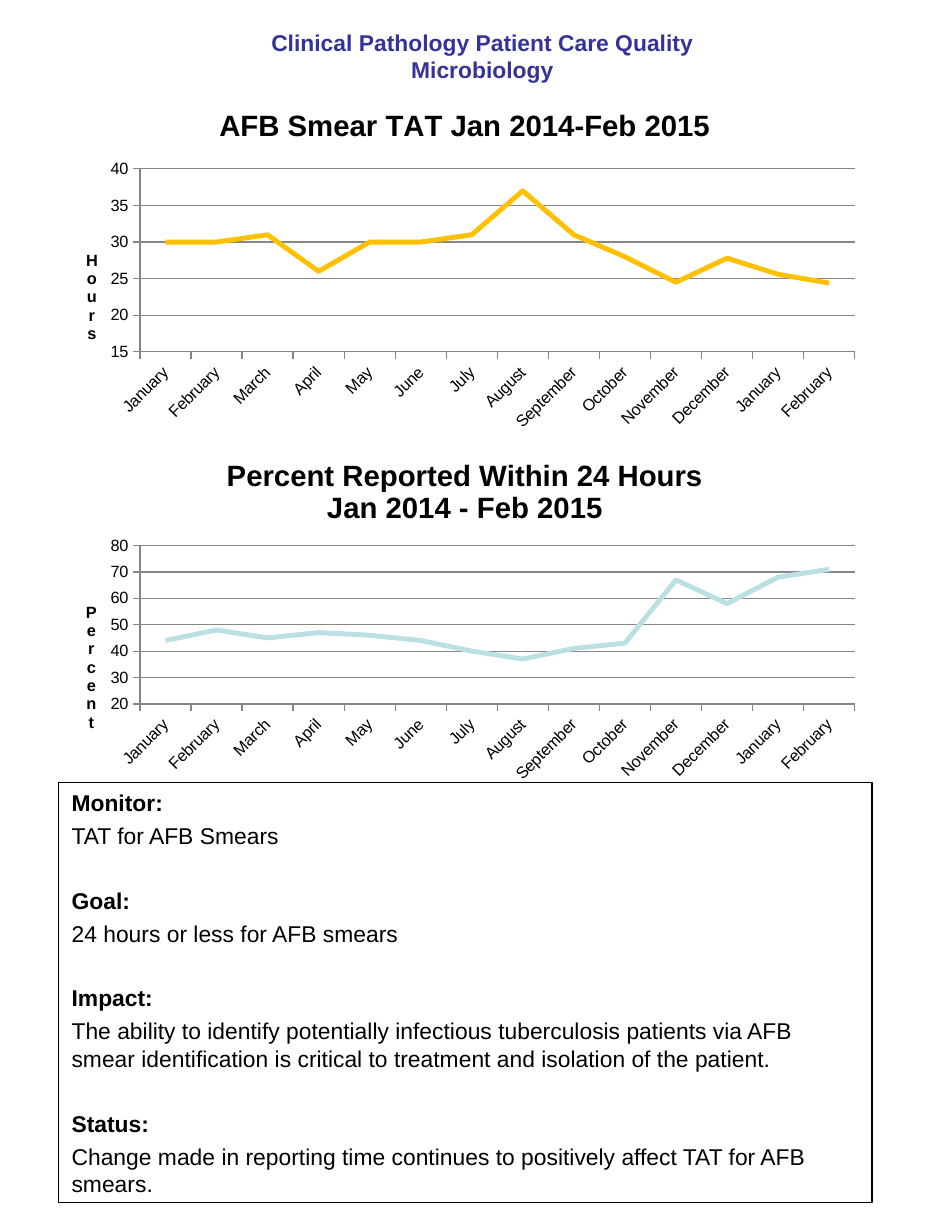
from dataclasses import dataclass

from lxml import etree
from pptx import Presentation
from pptx.chart.data import CategoryChartData
from pptx.dml.color import RGBColor as Color
from pptx.enum.chart import XL_CHART_TYPE as ChartType, XL_TICK_MARK as TickMark
from pptx.enum.text import MSO_ANCHOR as Anchor, MSO_AUTO_SIZE as AutoSize, PP_ALIGN as Align
from pptx.oxml import parse_xml
from pptx.oxml.ns import nsdecls, qn
from pptx.util import Inches, Pt


@dataclass(frozen=True)
class Theme:
    font: str = "Arial"
    heading: Color = Color(0x33, 0x33, 0x99)
    ink: Color = Color(0, 0, 0)
    grid: Color = Color(0x86, 0x86, 0x86)
    hours: Color = Color(0xFF, 0xC0, 0x00)
    percent: Color = Color(0xBB, 0xE0, 0xE3)
    body_size: int = 14
    chart_title_size: int = 18
    label_size: int = 10


THEME = Theme()

MONTHS = ["January", "February", "March", "April", "May", "June", "July", "August",
          "September", "October", "November", "December", "January", "February"]
HOURS = [30, 30, 31, 26, 30, 30, 31, 37, 31, 28, 24.5, 27.8, 25.6, 24.4]
PERCENTS = [44, 48, 45, 47, 46, 44, 40, 37, 41, 43, 67, 58, 68, 71]
SECTIONS = [
    ("Monitor:", "TAT for AFB Smears"),
    ("Goal:", "24 hours or less for AFB smears"),
    ("Impact:", "The ability to identify potentially infectious tuberculosis patients "
                "via AFB smear identification is critical to treatment and isolation "
                "of the patient."),
    ("Status:", "Change made in reporting time continues to positively affect TAT "
                "for AFB smears."),
]


def style_font(font, size, color=THEME.ink, bold=False):
    font.name = THEME.font
    font.size = Pt(size)
    font.bold = bold
    font.color.rgb = color


def place(box, left, top, width, height):
    box.left, box.top = Inches(left), Inches(top)
    box.width, box.height = Inches(width), Inches(height)
    frame = box.text_frame
    frame.auto_size = AutoSize.NONE
    frame.word_wrap = True
    frame.margin_left = frame.margin_right = Inches(0.11)
    frame.margin_top = frame.margin_bottom = Inches(0.05)
    return frame


def fill_title(box, text):
    frame = place(box, 0.51, 0.25, 7.2, 0.45)
    frame.vertical_anchor = Anchor.MIDDLE
    frame.text = text
    for para in frame.paragraphs:
        para.alignment = Align.CENTER
        for span in para.runs:
            style_font(span.font, THEME.body_size, THEME.heading, bold=True)


def add_line(frame, text, bold, gap):
    para = frame.paragraphs[0]
    if para.runs:
        para = frame.add_paragraph()
    para.text = text
    para.space_before = Pt(gap)
    properties = para._p.get_or_add_pPr()
    properties.set("marL", "0")
    properties.set("indent", "0")
    etree.SubElement(properties, qn("a:buNone"))
    style_font(para.runs[0].font, THEME.body_size, bold=bold)


def fill_body(box, sections):
    frame = place(box, 0.5, 6.67, 6.93, 3.58)
    frame.vertical_anchor = Anchor.TOP
    box.line.color.rgb = THEME.ink
    box.line.width = Pt(0.75)
    for index, (label, text) in enumerate(sections):
        add_line(frame, label, True, 23 if index else 3.4)
        add_line(frame, text, False, 3.4)


def set_layout(parent, position, **sizes):
    for old in parent.findall(qn("c:layout")):
        parent.remove(old)
    target = '<c:layoutTarget val="inner"/>' if sizes else ""
    modes = '<c:xMode val="edge"/><c:yMode val="edge"/>'
    values = "".join(f'<c:{name} val="{value}"/>' for name, value in sizes.items())
    x, y = position
    layout = parse_xml(
        f'<c:layout {nsdecls("c")}><c:manualLayout>{target}{modes}'
        f'<c:x val="{x}"/><c:y val="{y}"/>{values}</c:manualLayout></c:layout>')
    text = parent.find(qn("c:tx"))
    parent.insert(0 if text is None else parent.index(text) + 1, layout)


def set_heading(holder, text, size):
    frame = holder.text_frame
    frame.text = text
    for para in frame.paragraphs:
        for span in para.runs:
            style_font(span.font, size, bold=True)
    return frame


def style_axis(axis):
    axis.major_tick_mark = TickMark.OUTSIDE
    axis.minor_tick_mark = TickMark.NONE
    axis.format.line.color.rgb = THEME.grid
    style_font(axis.tick_labels.font, THEME.label_size)


def add_trend(page, top, title, unit, values, color, scale, plot_top, plot_height):
    data = CategoryChartData()
    data.categories = MONTHS
    data.add_series("Series 1", values)
    chart = page.shapes.add_chart(ChartType.LINE, Inches(0.5), Inches(top),
                                  Inches(6.92), Inches(3), data).chart
    chart.has_legend = False
    style_font(chart.font, THEME.label_size)
    chart.has_title = True
    set_heading(chart.chart_title, title, THEME.chart_title_size)
    chart.plots[0].vary_by_categories = False

    series = chart.plots[0].series[0]
    series.smooth = False
    series.format.line.color.rgb = color
    series.format.line.width = Pt(3)

    months, amounts = chart.category_axis, chart.value_axis
    style_axis(months)
    style_axis(amounts)
    months._element.find(qn("c:txPr")).find(qn("a:bodyPr")).set("rot", "-2700000")
    amounts.minimum_scale, amounts.maximum_scale, amounts.major_unit = scale
    amounts.has_major_gridlines = True
    amounts.major_gridlines.format.line.color.rgb = THEME.grid
    amounts.has_title = True
    frame = set_heading(amounts.axis_title, unit, THEME.label_size)
    direction = frame._txBody.find(qn("a:bodyPr"))
    direction.set("rot", "0")
    direction.set("vert", "wordArtVert")
    set_layout(amounts.axis_title._element, (0.03, 0.45))
    plot_area = chart._chartSpace.chart.plotArea
    set_layout(plot_area, (0.1, plot_top), w=0.88, h=plot_height)


def main():
    deck = Presentation()
    deck.slide_width, deck.slide_height = Inches(8), Inches(10.5)
    page = deck.slides.add_slide(deck.slide_layouts[1])
    fill_title(page.shapes.title, "Clinical Pathology Patient Care Quality\vMicrobiology")
    fill_body(page.placeholders[1], SECTIONS)
    add_trend(page, 0.75, "AFB Smear TAT Jan 2014-Feb 2015", "Hours", HOURS,
              THEME.hours, (15, 40, 5), 0.23, 0.52)
    add_trend(page, 3.75, "Percent Reported Within 24 Hours\nJan 2014 - Feb 2015",
              "Percent", PERCENTS, THEME.percent, (20, 80, 10), 0.3, 0.45)
    deck.save("out.pptx")


if __name__ == "__main__":
    main()
